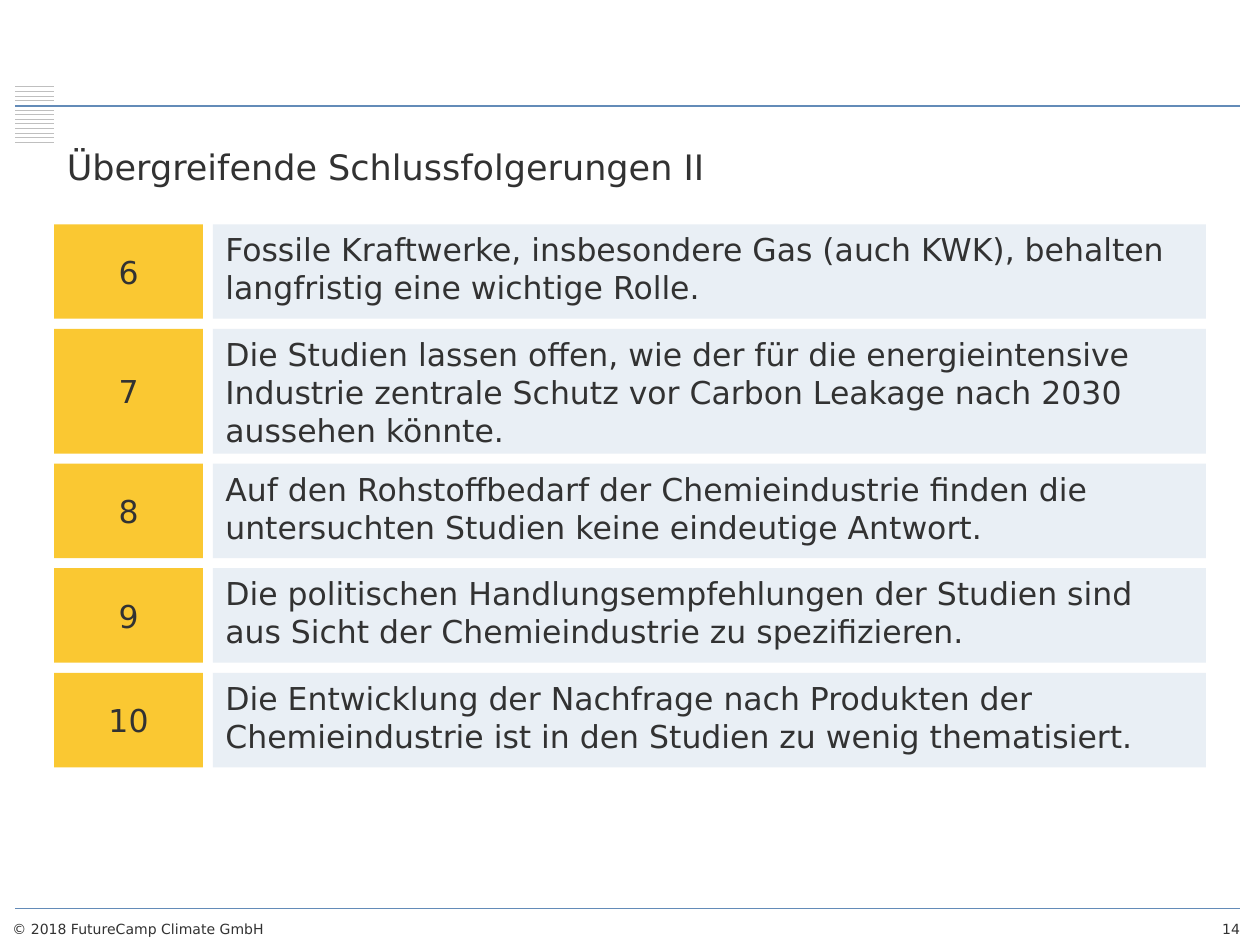
import dataclasses

import pptx
import pptx.dml.color
import pptx.enum.shapes
import pptx.enum.text
import pptx.oxml
import pptx.oxml.ns
import pptx.util

Inches = pptx.util.Inches
Pt = pptx.util.Pt
RGBColor = pptx.dml.color.RGBColor
Align = pptx.enum.text.PP_ALIGN
Anchor = pptx.enum.text.MSO_ANCHOR
AutoSize = pptx.enum.text.MSO_AUTO_SIZE


@dataclasses.dataclass(frozen=True)
class Theme:
    font: str = "DejaVu Sans"
    text: RGBColor = RGBColor(0x32, 0x32, 0x32)
    rule: RGBColor = RGBColor(0x63, 0x8B, 0xB8)
    stripe: RGBColor = RGBColor(0xBF, 0xBF, 0xBF)
    number_fill: RGBColor = RGBColor(0xFA, 0xC8, 0x32)
    statement_fill: RGBColor = RGBColor(0xE9, 0xEF, 0xF5)
    title_size: int = 20
    body_size: int = 18
    footer_size: int = 8


THEME = Theme()

# Number, statement, row height in inches
CONCLUSIONS = [
    ("6", "Fossile Kraftwerke, insbesondere Gas (auch KWK), behalten "
          "langfristig eine wichtige Rolle.", 0.75),
    ("7", "Die Studien lassen offen, wie der für die energieintensive Industrie "
          "zentrale Schutz vor Carbon Leakage nach 2030 aussehen könnte.", 0.99),
    ("8", "Auf den Rohstoffbedarf der Chemieindustrie finden die untersuchten "
          "Studien keine eindeutige Antwort.", 0.75),
    ("9", "Die politischen Handlungsempfehlungen der Studien sind aus Sicht der "
          "Chemieindustrie zu spezifizieren.", 0.75),
    ("10", "Die Entwicklung der Nachfrage nach Produkten der Chemieindustrie ist "
           "in den Studien zu wenig thematisiert.", 0.75),
]


def write_text(shape, text, size, alignment=Align.LEFT):
    paragraph = shape.text_frame.paragraphs[0]
    paragraph.text = text
    paragraph.alignment = alignment
    paragraph.font.name = THEME.font
    paragraph.font.size = Pt(size)
    paragraph.font.color.rgb = THEME.text


def add_horizontal_line(shapes, left, right, y, color, weight):
    line = shapes.add_connector(
        pptx.enum.shapes.MSO_CONNECTOR.STRAIGHT,
        Inches(left), Inches(y), Inches(right), Inches(y))
    line.line.color.rgb = color
    line.line.width = Pt(weight)
    properties = line._element.spPr
    properties.append(properties.makeelement(pptx.oxml.ns.qn("a:effectLst"), {}))


def add_stripes(slide, left, top, width, height, count=13, skipped=4):
    """Group of evenly spaced thin lines, with a gap where the top rule passes."""
    group = slide.shapes.add_group_shape()
    for index in range(count):
        if index != skipped:
            y = top + index * height / (count - 1)
            add_horizontal_line(group.shapes, left, left + width, y, THEME.stripe, 0.5)


def add_title(slide, left, top, width, height, text):
    title = slide.shapes.title
    title.left, title.top = Inches(left), Inches(top)
    title.width, title.height = Inches(width), Inches(height)
    frame = title.text_frame
    frame.auto_size = AutoSize.NONE
    frame.vertical_anchor = Anchor.MIDDLE
    frame.margin_left = frame.margin_right = Inches(0.1)
    frame.margin_top = frame.margin_bottom = 0
    write_text(title, text, THEME.title_size)


def add_footer_text(slide, left, top, width, height, text, alignment):
    box = slide.shapes.add_textbox(
        Inches(left), Inches(top), Inches(width), Inches(height))
    box.text_frame.word_wrap = True
    box.text_frame.auto_size = AutoSize.SHAPE_TO_FIT_TEXT
    write_text(box, text, THEME.footer_size, alignment)


def add_panel(slide, left, top, width, height, fill):
    panel = slide.shapes.add_shape(
        pptx.enum.shapes.MSO_SHAPE.RECTANGLE,
        Inches(left), Inches(top), Inches(width), Inches(height))
    panel.shadow.inherit = False
    panel.fill.solid()
    panel.fill.fore_color.rgb = fill
    panel.line.fill.background()
    return panel


def add_conclusions(slide, left, top, width, conclusions, number_width=1.18, gap=0.08):
    """Stack of rows, each a number panel beside a statement panel."""
    statement_offset = number_width + gap
    for number, statement, height in conclusions:
        panel = add_panel(slide, left + statement_offset, top,
                          width - statement_offset, height, THEME.statement_fill)
        panel.text_frame.word_wrap = True
        panel.text_frame.vertical_anchor = Anchor.TOP
        write_text(panel, statement, THEME.body_size)

        panel = add_panel(slide, left, top, number_width, height, THEME.number_fill)
        panel.text_frame.word_wrap = False
        panel.text_frame.vertical_anchor = Anchor.MIDDLE
        write_text(panel, number, THEME.body_size, Align.CENTER)
        top += height + gap


def main():
    presentation = pptx.Presentation()
    presentation.slide_width = Inches(10)
    presentation.slide_height = Inches(7.5)
    slide = presentation.slides.add_slide(presentation.slide_layouts.get_by_name("Title Only"))

    for y in (7.21, 0.84):
        add_horizontal_line(slide.shapes, 0.12, 9.84, y, THEME.rule, 1)
    add_stripes(slide, 0.12, 0.69, 0.31, 0.44)
    add_footer_text(slide, 0, 7.26, 3.5, 0.24, "© 2018 FutureCamp Climate GmbH", Align.LEFT)
    add_footer_text(slide, 9, 7.26, 0.94, 0.24, "14", Align.RIGHT)
    add_title(slide, 0.43, 1.04, 9.14, 0.57, "Übergreifende Schlussfolgerungen II")
    add_conclusions(slide, 0.43, 1.78, 9.14, CONCLUSIONS)

    presentation.save("out.pptx")


if __name__ == "__main__":
    main()
